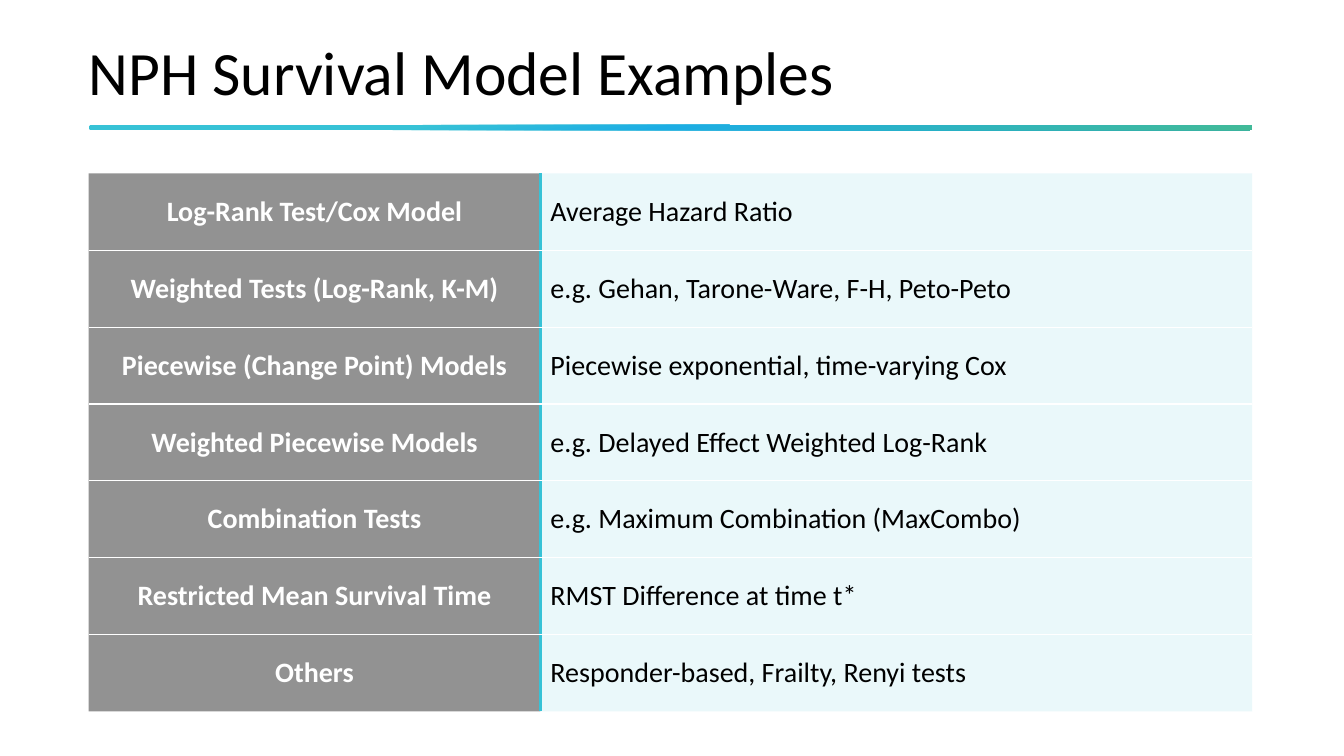
from lxml import etree
from pptx import Presentation
from pptx.dml.color import RGBColor
from pptx.enum import shapes, text
from pptx.oxml import parse_xml
from pptx.oxml.ns import nsdecls, qn
from pptx.util import Inches, Pt

BLACK = RGBColor(0x00, 0x00, 0x00)
WHITE = RGBColor(0xFF, 0xFF, 0xFF)
CHARCOAL = RGBColor(0x26, 0x26, 0x26)
PALE_AQUA = RGBColor(0xD6, 0xF2, 0xF6)
TURQUOISE = RGBColor(0x37, 0xC2, 0xD6)
BLUE = RGBColor(0x1C, 0xAD, 0xE4)
GREEN = RGBColor(0x42, 0xBA, 0x97)

LEFT, WIDTH = Inches(0.88), Inches(11.54)
MODELS = [
    ("Log-Rank Test/Cox Model", "Average Hazard Ratio"),
    ("Weighted Tests (Log-Rank, K-M)", "e.g. Gehan, Tarone-Ware, F-H, Peto-Peto"),
    ("Piecewise (Change Point) Models", "Piecewise exponential, time-varying Cox"),
    ("Weighted Piecewise Models", "e.g. Delayed Effect Weighted Log-Rank"),
    ("Combination Tests", "e.g. Maximum Combination (MaxCombo)"),
    ("Restricted Mean Survival Time", "RMST Difference at time t*"),
    ("Others", "Responder-based, Frailty, Renyi tests"),
]


def add_run(paragraph, words, size, color, bold=False):
    run = paragraph.add_run()
    run.text = words
    run.font.name = "Calibri"
    run.font.size = Pt(size)
    run.font.bold = bold
    run.font.color.rgb = color


def set_borders(cell, borders):
    properties = cell._tc.get_or_add_tcPr()
    for position, (side, color, points) in enumerate(borders):
        paint = f'<a:solidFill><a:srgbClr val="{color}"/></a:solidFill>' if points else "<a:noFill/>"
        properties.insert(position, parse_xml(
            f'<a:ln{side} {nsdecls("a")} w="{Pt(points)}">{paint}</a:ln{side}>'))


prs = Presentation()
prs.slide_width, prs.slide_height = Inches(13.33), Inches(7.5)
slide = prs.slides.add_slide(prs.slide_layouts[6])

rule = slide.shapes.add_shape(
    shapes.MSO_SHAPE.ROUNDED_RECTANGLE, LEFT, Inches(1.24), WIDTH, Inches(0.05))
rule.adjustments[0] = 0.5
rule.shadow.inherit = False
rule.line.fill.background()
rule.fill.gradient()
gradient = rule._element.spPr.find(qn("a:gradFill"))
stops = gradient.find(qn("a:gsLst"))
for stop in list(stops):
    stops.remove(stop)
for percent, color in [(0, TURQUOISE), (28, TURQUOISE), (50, BLUE), (100, GREEN)]:
    stop = etree.SubElement(stops, qn("a:gs"), pos=str(percent * 1000))
    etree.SubElement(stop, qn("a:srgbClr"), val=str(color))
gradient.find(qn("a:lin")).set("ang", str(80 * 60000))

title = slide.shapes.add_textbox(LEFT, Inches(0.24), WIDTH, Inches(0.84)).text_frame
title.word_wrap = True
title.vertical_anchor = text.MSO_ANCHOR.BOTTOM
title.margin_left = title.margin_right = title.margin_top = title.margin_bottom = 0
title.paragraphs[0].line_spacing = 0.9
add_run(title.paragraphs[0], "NPH Survival Model Examples", 44, BLACK)

models = slide.shapes.add_table(len(MODELS), 2, LEFT, Inches(1.72), WIDTH, Inches(5.34)).table
models.first_row = models.horz_banding = False
models.columns[0].width = Inches(4.48)
models.columns[1].width = WIDTH - Inches(4.48)

COLUMN_STYLES = [
    (CHARCOAL, WHITE, True, text.PP_ALIGN.CENTER),
    (PALE_AQUA, BLACK, False, text.PP_ALIGN.LEFT),
]
for row, entry in enumerate(MODELS):
    for column, (fill, ink, bold, align) in enumerate(COLUMN_STYLES):
        cell = models.cell(row, column)
        cell.vertical_anchor = text.MSO_ANCHOR.MIDDLE
        cell.margin_left = cell.margin_right = Inches(0.1)
        cell.margin_top = cell.margin_bottom = Inches(0.1)
        cell.fill.solid()
        cell.fill.fore_color.rgb = fill
        shade = cell._tc.tcPr.find(qn("a:solidFill"))[0]
        etree.SubElement(shade, qn("a:alpha"), val="50000")
        set_borders(cell, [
            ("L", TURQUOISE, 3 if column == 1 else 0),
            ("R", TURQUOISE, 3 if column == 0 else 0),
            ("T", WHITE, 1 if row > 0 else 0),
            ("B", WHITE, 1 if row < len(MODELS) - 1 else 0),
        ])
        paragraph = cell.text_frame.paragraphs[0]
        paragraph.alignment = align
        add_run(paragraph, entry[column], 20, ink, bold)

prs.save("out.pptx")
